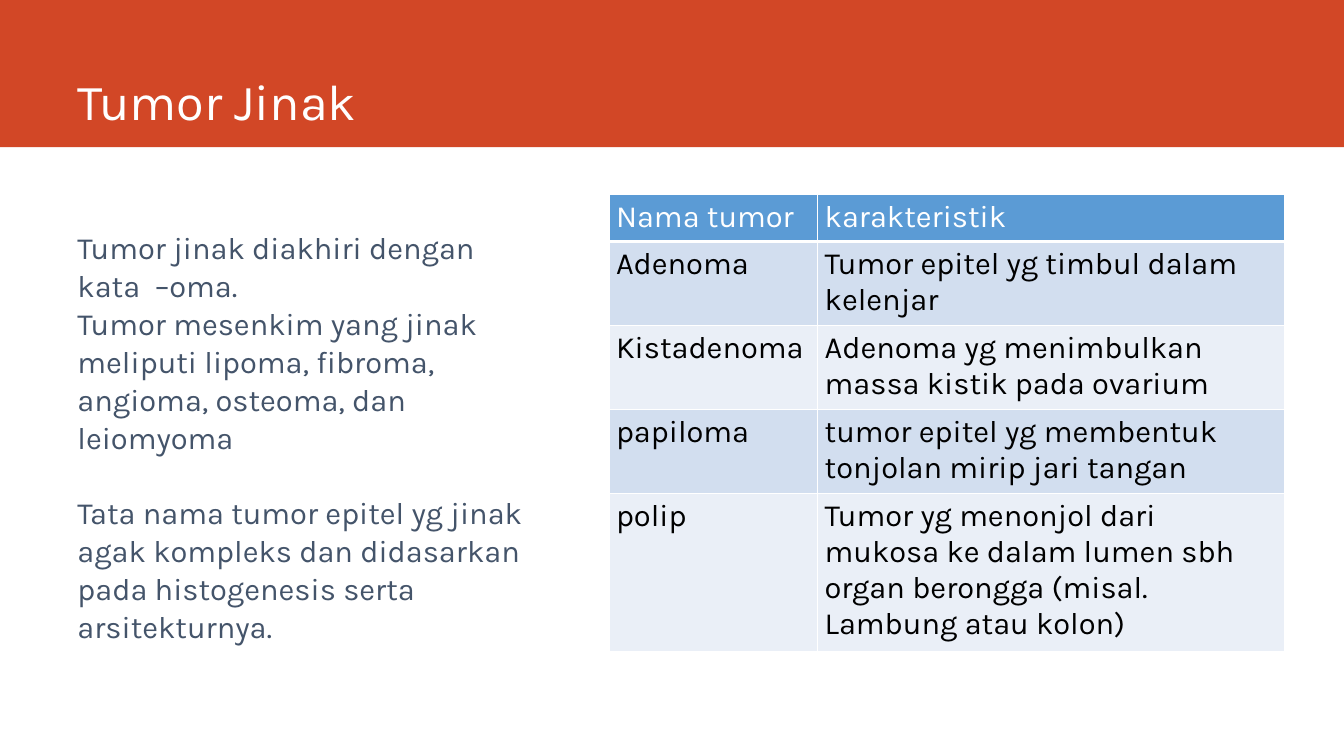
from dataclasses import dataclass

import pptx
import pptx.dml.color
import pptx.enum.shapes
import pptx.enum.text
import pptx.oxml
import pptx.oxml.ns
import pptx.shapes.autoshape
import pptx.slide
import pptx.table
import pptx.text.text
import pptx.util

Inches = pptx.util.Inches
Pt = pptx.util.Pt
RGBColor = pptx.dml.color.RGBColor

WHITE = RGBColor(0xFF, 0xFF, 0xFF)
BLACK = RGBColor(0x00, 0x00, 0x00)
ORANGE = RGBColor(0xD2, 0x47, 0x26)
SLATE = RGBColor(0x44, 0x54, 0x6A)
HEADER_BLUE = RGBColor(0x5B, 0x9B, 0xD5)
BAND_BLUES = (RGBColor(0xD2, 0xDE, 0xEF), RGBColor(0xEA, 0xEF, 0xF7))

FONT = "Karla"
BODY_SIZE = 22
BODY_LEADING = 1.03
TABLE_LINE = 0.36
COLUMN_WIDTHS = (2.07, 4.63)


@dataclass(frozen=True)
class Tumor:
    name: str
    trait: str
    lines: int


@dataclass(frozen=True)
class Box:
    left: float
    top: float
    width: float
    height: float

    def lengths(self) -> tuple[int, ...]:
        return tuple(Inches(v) for v in (self.left, self.top, self.width, self.height))


HEADING = Tumor("Nama tumor", "karakteristik", 1)
TUMORS = (
    Tumor("Adenoma", "Tumor epitel yg timbul dalam kelenjar", 2),
    Tumor("Kistadenoma", "Adenoma yg menimbulkan massa kistik pada ovarium", 2),
    Tumor("papiloma", "tumor epitel yg membentuk tonjolan mirip jari tangan", 2),
    Tumor("polip", "Tumor yg menonjol dari mukosa ke dalam lumen sbh organ "
          "berongga (misal. Lambung atau kolon)", 4),
)
NAMING_RULES = (
    "Tumor jinak diakhiri dengan kata  –oma.",
    "Tumor mesenkim yang jinak meliputi lipoma, fibroma, angioma, osteoma, dan leiomyoma",
    "Tata nama tumor epitel yg jinak agak kompleks dan didasarkan pada "
    "histogenesis serta arsitekturnya.",
)


def write(paragraph: pptx.text.text._Paragraph, text: str, size: float, color: RGBColor) -> None:
    run = paragraph.add_run()
    run.text = text
    for attribute, value in {"name": FONT, "size": Pt(size), "bold": False}.items():
        setattr(run.font, attribute, value)
    run.font.color.rgb = color


def add_text_box(slide: pptx.slide.Slide, box: Box) -> pptx.text.text.TextFrame:
    frame = slide.shapes.add_textbox(*box.lengths()).text_frame
    frame.word_wrap = True
    return frame


def add_title_band(slide: pptx.slide.Slide) -> None:
    band = slide.shapes.add_shape(
        pptx.enum.shapes.MSO_SHAPE.RECTANGLE, *Box(0, 0, 13.33, 1.46).lengths())
    band.shadow.inherit = False
    band.fill.solid()
    band.fill.fore_color.rgb = ORANGE
    band.line.fill.background()

    title = add_text_box(slide, Box(0.67, 0, 11.75, 1.34))
    title.vertical_anchor = pptx.enum.text.MSO_ANCHOR.BOTTOM
    write(title.paragraphs[0], "Tumor Jinak", 36, WHITE)


def add_naming_rules(slide: pptx.slide.Slide) -> None:
    rules = add_text_box(slide, Box(0.67, 2.21, 4.8, 4.17))
    for index, rule in enumerate(NAMING_RULES):
        paragraph = rules.add_paragraph() if index else rules.paragraphs[0]
        paragraph.line_spacing = BODY_LEADING
        write(paragraph, rule, BODY_SIZE, SLATE)
    rules.paragraphs[-1].space_before = Pt(26.4)


def set_borders(cell: pptx.table._Cell, bottom: float) -> None:
    properties = cell._tc.get_or_add_tcPr()
    widths = {"lnL": 1, "lnR": 1, "lnT": 1, "lnB": bottom}
    for index, (side, width) in enumerate(widths.items()):
        properties.insert(index, pptx.oxml.parse_xml(
            f'<a:{side} {pptx.oxml.ns.nsdecls("a")} w="{Pt(width)}">'
            f'<a:solidFill><a:srgbClr val="{WHITE}"/></a:solidFill></a:{side}>'))


def add_tumor_table(slide: pptx.slide.Slide) -> None:
    entries = (HEADING, *TUMORS)
    heights = [0.1 + TABLE_LINE * entry.lines for entry in entries]
    area = Box(6.04, 1.93, sum(COLUMN_WIDTHS), sum(heights))
    table = slide.shapes.add_table(
        len(entries), len(COLUMN_WIDTHS), *area.lengths()).table
    for column, width in zip(table.columns, COLUMN_WIDTHS):
        column.width = Inches(width)
    margins = {"margin_left": 0.07, "margin_right": 0.07,
               "margin_top": 0.05, "margin_bottom": 0.05}
    for index, (entry, height) in enumerate(zip(entries, heights)):
        is_header = index == 0
        table.rows[index].height = Inches(height)
        for cell, text in zip(table.rows[index].cells, (entry.name, entry.trait)):
            for attribute, value in margins.items():
                setattr(cell, attribute, Inches(value))
            cell.fill.solid()
            cell.fill.fore_color.rgb = HEADER_BLUE if is_header else BAND_BLUES[(index - 1) % 2]
            set_borders(cell, bottom=3 if is_header else 1)
            write(cell.text_frame.paragraphs[0], text, BODY_SIZE, WHITE if is_header else BLACK)


def main() -> None:
    presentation = pptx.Presentation()
    presentation.slide_width = Inches(13.33)
    presentation.slide_height = Inches(7.5)
    slide = presentation.slides.add_slide(presentation.slide_layouts[6])
    add_title_band(slide)
    add_tumor_table(slide)
    add_naming_rules(slide)
    presentation.save("out.pptx")


if __name__ == "__main__":
    main()
